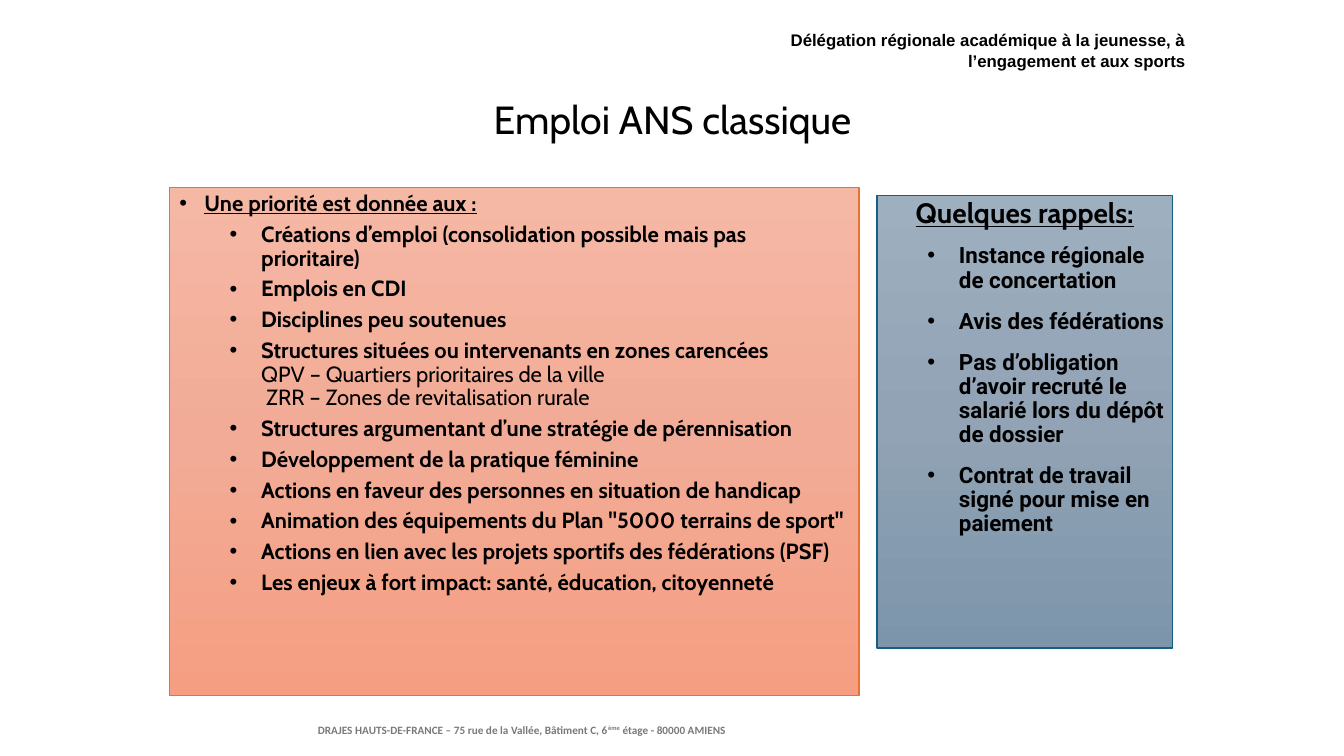
from lxml import etree
from pptx import Presentation, util as u
from pptx.dml.color import RGBColor
from pptx.enum import shapes, text
from pptx.oxml.ns import qn

PRIORITIES = [
    "Créations d’emploi (consolidation possible mais pas prioritaire)",
    "Emplois en CDI",
    "Disciplines peu soutenues",
    "Structures situées ou intervenants en zones carencées",
    "Structures argumentant d’une stratégie de pérennisation",
    "Développement de la pratique féminine",
    "Actions en faveur des personnes en situation de handicap",
    'Animation des équipements du Plan "5000 terrains de sport"',
    "Actions en lien avec les projets sportifs des fédérations (PSF)",
    "Les enjeux à fort impact: santé, éducation, citoyenneté",
]
ZONES = "\nQPV – Quartiers prioritaires de la ville\n ZRR – Zones de revitalisation rurale"
REMINDERS = [
    "Instance régionale de concertation",
    "Avis des fédérations",
    "Pas d’obligation d’avoir recruté le salarié lors du dépôt de dossier",
    "Contrat de travail signé pour mise en paiement",
]


def color(value):
    return RGBColor.from_string(value)


def write(paragraph, content, size, font, fill="000000", bold=False, underline=False, raised=0):
    """Add text to a paragraph; each newline becomes a line break."""
    for index, line in enumerate(content.split("\n")):
        if index:
            paragraph.add_line_break()
        if not line:
            continue
        run = paragraph.add_run()
        run.text = line
        run.font.size, run.font.name = u.Pt(size), font
        run.font.bold, run.font.underline = bold, underline
        run.font.color.rgb = color(fill)
        if raised:
            run.font._element.set("baseline", str(raised * 1000))


class Deck:
    """Style and current slide."""

    align = {"l": text.PP_ALIGN.LEFT, "c": text.PP_ALIGN.CENTER, "r": text.PP_ALIGN.RIGHT}

    def __init__(self):
        self.presentation = Presentation()
        self.presentation.slide_width = u.Pt(960)
        self.presentation.slide_height = u.Pt(540)
        self.slide = self.presentation.slides.add_slide(self.presentation.slide_layouts[6])

    def frame(self, shape, inset, middle=False):
        frame = shape.text_frame
        frame.word_wrap = True
        frame.auto_size = text.MSO_AUTO_SIZE.NONE
        frame.vertical_anchor = text.MSO_ANCHOR.MIDDLE if middle else text.MSO_ANCHOR.TOP
        if not inset:
            frame.margin_left = frame.margin_top = frame.margin_right = frame.margin_bottom = 0
        return frame

    def textbox(self, box, inset=True, middle=False):
        shape = self.slide.shapes.add_textbox(*map(u.Pt, box))
        return self.frame(shape, inset, middle)

    def panel(self, box, stops, outline, inset=True):
        shape = self.slide.shapes.add_shape(shapes.MSO_SHAPE.RECTANGLE, *map(u.Pt, box))
        shape.shadow.inherit = False
        shape.line.color.rgb = color(outline)
        shape.line.width = u.Pt(1)
        shape.fill.gradient()
        shape.fill.gradient_angle = 270
        # Three evenly spaced stops
        stop_list = shape._element.spPr.find(".//" + qn("a:gsLst"))
        for stop in list(stop_list):
            stop_list.remove(stop)
        for index, value in enumerate(stops):
            stop = etree.SubElement(stop_list, qn("a:gs"), pos=str(index * 50000))
            etree.SubElement(stop, qn("a:srgbClr"), val=value)
        return self.frame(shape, inset)

    def paragraph(self, frame, align="l", spacing=None, before=0, after=0, indent=None, level=0):
        """Use the first paragraph, then new ones; indent = (left, hanging) adds a bullet."""
        first = frame.paragraphs[0]
        paragraph = frame.add_paragraph() if first.runs else first
        paragraph.alignment = self.align[align]
        paragraph.level = level
        paragraph.space_before, paragraph.space_after = u.Pt(before), u.Pt(after)
        if spacing:
            paragraph.line_spacing = spacing
        if indent:
            left, hanging = indent
            properties = paragraph._p.get_or_add_pPr()
            properties.set("marL", str(u.Pt(left)))
            properties.set("indent", str(-u.Pt(hanging)))
            etree.SubElement(properties, qn("a:buFont"), typeface="Arial")
            etree.SubElement(properties, qn("a:buChar"), char="•")
        return paragraph


def main():
    deck = Deck()
    sub_item = dict(spacing=0.9, indent=(58.5, 22.5), level=1)

    # Title
    title = deck.textbox((121, 49, 718.5, 75.5), middle=True)
    write(deck.paragraph(title, "c", spacing=0.9), "Emploi ANS classique", 28, "Cabin")

    # Footer address
    footer = deck.textbox((121, 502.5, 503.5, 37.5), inset=False, middle=True)
    address = deck.paragraph(footer, "c", after=6)
    small = dict(size=8, font="Calibri", fill="797979", bold=True)
    write(address, "DRAJES HAUTS-DE-FRANCE – 75 rue de la Vallée, Bâtiment C, 6", **small)
    write(address, "ème", raised=30, **small)
    write(address, " étage - 80000 AMIENS", **small)

    # Priorities
    panel = deck.panel((121, 134, 492.5, 363), ("F5B8A5", "F2AB96", "F59E82"), "E97132")
    heading = deck.paragraph(panel, spacing=0.9, before=12, indent=(18, 18))
    write(heading, "Une priorité est donnée aux :", 15.7, "Cabin", bold=True, underline=True)
    for priority in PRIORITIES:
        item = deck.paragraph(panel, before=5, **sub_item)
        write(item, priority, 15.7, "Cabin", bold=True)
        if "zones" in priority:
            write(item, ZONES, 15.7, "Cabin")

    # Reminders
    panel = deck.panel((626.5, 139.75, 211, 323.25), ("9EAFBF", "91A3B4", "7C95AB"), "156082", inset=False)
    heading = deck.paragraph(panel, "c", before=12, after=5)
    write(heading, "Quelques rappels:", 20, "Cabin", bold=True, underline=True)
    for reminder in REMINDERS:
        item = deck.paragraph(panel, before=6, after=6, **sub_item)
        write(item, reminder, 16, "Roboto", bold=True)

    # Department name
    header = deck.textbox((497, 18, 357, 36))
    write(deck.paragraph(header, "r"),
          "Délégation régionale académique à la jeunesse, à l’engagement et aux sports",
          12, "Arial", bold=True)

    deck.presentation.save("out.pptx")


if __name__ == "__main__":
    main()
